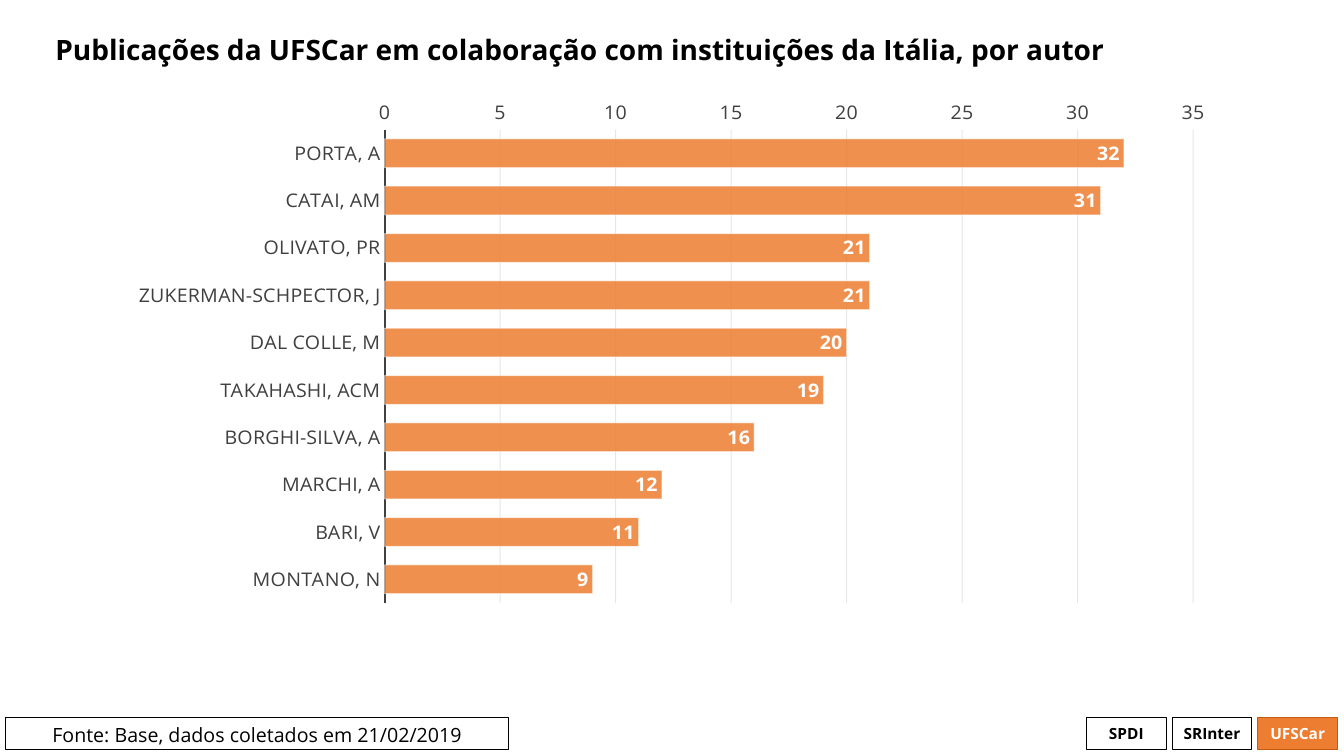
from lxml import etree
from pptx import Presentation
from pptx import util as u
from pptx.chart import data as chart_data
from pptx.dml.color import RGBColor
from pptx.enum import chart as charts, shapes, text
from pptx.oxml import parse_xml
from pptx.oxml.ns import nsdecls, qn

BLACK = RGBColor(0x00, 0x00, 0x00)
WHITE = RGBColor(0xFF, 0xFF, 0xFF)
GRAY = RGBColor(0x40, 0x40, 0x40)
GRID = RGBColor(0x0D, 0x0D, 0x0D)
ORANGE = RGBColor(0xED, 0x7D, 0x31)
DARK_ORANGE = RGBColor(0xC5, 0x5A, 0x11)

PUBLICATIONS = {
    "PORTA, A": 32,
    "CATAI, AM": 31,
    "OLIVATO, PR": 21,
    "ZUKERMAN-SCHPECTOR, J": 21,
    "DAL COLLE, M": 20,
    "TAKAHASHI, ACM": 19,
    "BORGHI-SILVA, A": 16,
    "MARCHI, A": 12,
    "BARI, V": 11,
    "MONTANO, N": 9,
}
FOOTER_TOP, FOOTER_HEIGHT = 18.08, 0.81
TAG_LEFT, TAG_STEP, TAG_WIDTH = 27.38, 2.16, 2.01


def apply(target, **values):
    for name, value in values.items():
        setattr(target, name, value)


def set_opacity(fill_parent, percent):
    """Add an alpha value to the solid fill inside an XML element."""
    color = next(fill_parent.iter(qn("a:srgbClr")))
    etree.SubElement(color, qn("a:alpha")).set("val", str(percent * 1000))


class SlideBuilder:
    font_name = "Open Sans"

    def __init__(self, slide):
        self.slide = slide

    def format_font(self, font, size, color, bold=False):
        apply(font, name=self.font_name, size=u.Pt(size), bold=bold)
        font.color.rgb = color

    def add_title(self, wording, left, top, width, height):
        title = self.slide.shapes.title
        apply(title, left=u.Cm(left), top=u.Cm(top),
              width=u.Cm(width), height=u.Cm(height))
        frame = title.text_frame
        frame.text = wording
        apply(frame, auto_size=text.MSO_AUTO_SIZE.NONE,
              vertical_anchor=text.MSO_ANCHOR.MIDDLE)
        paragraph = frame.paragraphs[0]
        apply(paragraph, alignment=text.PP_ALIGN.LEFT, line_spacing=0.9)
        self.format_font(paragraph.runs[0].font, 20, BLACK, True)

    def add_footer_box(self, wording, left, width, size, color=BLACK, bold=False,
                       fill=None, line=BLACK, anchor=text.MSO_ANCHOR.MIDDLE):
        shape = self.slide.shapes.add_shape(
            shapes.MSO_SHAPE.RECTANGLE, u.Cm(left), u.Cm(FOOTER_TOP),
            u.Cm(width), u.Cm(FOOTER_HEIGHT))
        shape.shadow.inherit = False
        if fill is None:
            shape.fill.background()
        else:
            shape.fill.solid()
            shape.fill.fore_color.rgb = fill
        shape.line.color.rgb = line
        shape.line.width = u.Pt(0.75)
        frame = shape.text_frame
        frame.text = wording
        apply(frame, margin_left=0, margin_right=0, word_wrap=True,
              vertical_anchor=anchor)
        paragraph = frame.paragraphs[0]
        paragraph.alignment = text.PP_ALIGN.CENTER
        self.format_font(paragraph.runs[0].font, size, color, bold)

    def add_bar_chart(self, values, left, top, width, height):
        data = chart_data.CategoryChartData()
        data.categories = list(values)
        data.add_series("Series 1", list(values.values()))
        chart = self.slide.shapes.add_chart(
            charts.XL_CHART_TYPE.BAR_CLUSTERED, u.Cm(left), u.Cm(top),
            u.Cm(width), u.Cm(height), data).chart
        apply(chart, has_legend=False, has_title=False)
        self.format_font(chart.font, 14, BLACK)
        self.format_axes(chart)
        self.format_bars(chart.plots[0])
        self.place_plot(chart, x=0.242, y=0.011, w=0.728, h=0.891)

    def format_axes(self, chart):
        names, scale = chart.category_axis, chart.value_axis
        for axis in (names, scale):
            apply(axis, major_tick_mark=charts.XL_TICK_MARK.NONE,
                  minor_tick_mark=charts.XL_TICK_MARK.NONE)
            self.format_font(axis.tick_labels.font, 14, GRAY)
        apply(names, reverse_order=True, crosses=charts.XL_AXIS_CROSSES.MAXIMUM)
        names.format.line.color.rgb = GRAY
        names.format.line.width = u.Pt(1.5)
        apply(scale, minimum_scale=0, maximum_scale=35, major_unit=5,
              has_major_gridlines=True)
        scale.format.line.fill.background()
        grid_line = scale.major_gridlines.format.line
        grid_line.color.rgb = GRID
        grid_line.width = u.Pt(0.75)
        set_opacity(scale._element.find(qn("c:majorGridlines")), 10)

    def format_bars(self, plot):
        apply(plot, gap_width=65, vary_by_categories=False, has_data_labels=True)
        bars = plot.series[0]
        bars.format.fill.solid()
        bars.format.fill.fore_color.rgb = ORANGE
        bars.format.line.color.rgb = WHITE
        bars.format.line.width = u.Pt(0.75)
        properties = bars._element.find(qn("c:spPr"))
        set_opacity(properties.find(qn("a:solidFill")), 85)
        set_opacity(properties.find(qn("a:ln")), 50)
        labels = plot.data_labels
        apply(labels, show_value=True,
              position=charts.XL_LABEL_POSITION.INSIDE_END)
        self.format_font(labels.font, 14, WHITE, True)

    def place_plot(self, chart, **fractions):
        """Fix the inner plot area as fractions of the chart's size."""
        area = chart._chartSpace.chart.plotArea
        for layout in area.findall(qn("c:layout")):
            area.remove(layout)
        places = "".join(f'<c:{name} val="{value}"/>'
                         for name, value in fractions.items())
        area.insert(0, parse_xml(
            f'<c:layout {nsdecls("c")}><c:manualLayout>'
            '<c:layoutTarget val="inner"/><c:xMode val="edge"/>'
            f'<c:yMode val="edge"/>{places}</c:manualLayout></c:layout>'))


def main():
    presentation = Presentation()
    apply(presentation, slide_width=u.Cm(33.87), slide_height=u.Cm(19.05))
    slide = presentation.slides.add_slide(presentation.slide_layouts[5])
    builder = SlideBuilder(slide)

    tags = [
        ("SPDI", {}),
        ("SRInter", {}),
        ("UFSCar", {"color": WHITE, "fill": ORANGE, "line": DARK_ORANGE}),
    ]
    for index, (wording, style) in enumerate(tags):
        builder.add_footer_box(wording, TAG_LEFT + index * TAG_STEP, TAG_WIDTH,
                               11, bold=True, **style)
    builder.add_footer_box("Fonte: Base, dados coletados em 21/02/2019",
                           0.15, 12.67, 14, anchor=text.MSO_ANCHOR.TOP)
    builder.add_title(
        "Publicações da UFSCar em colaboração com instituições da Itália, por autor",
        1.14, 0.15, 31.52, 2.31)
    builder.add_bar_chart(PUBLICATIONS, 2.92, 2.51, 27.99, 14)
    presentation.save("out.pptx")


if __name__ == "__main__":
    main()
